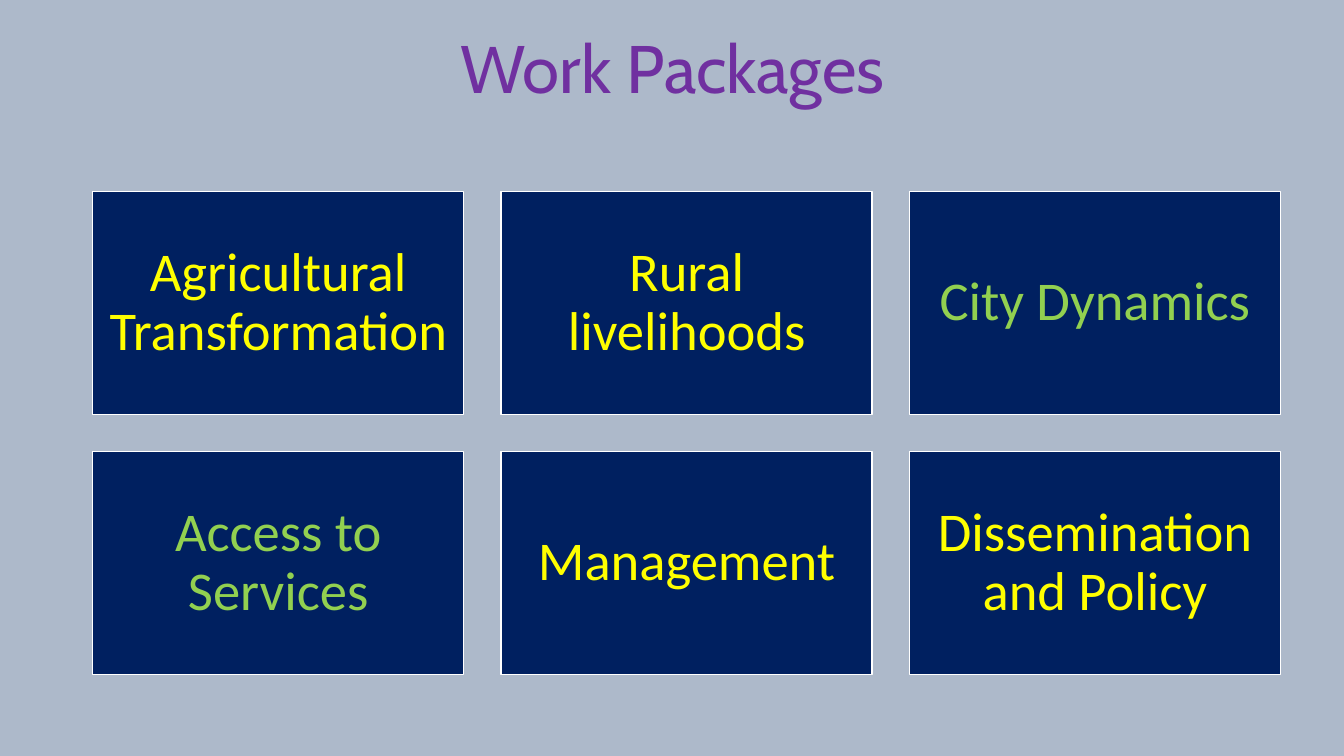
from pptx import Presentation
from pptx.dml.color import RGBColor
from pptx.enum.shapes import MSO_SHAPE
from pptx.enum.text import MSO_ANCHOR, PP_ALIGN
from pptx.util import Inches, Pt

TITLE = "Work Packages"
PACKS = [
    ("Agricultural Transformation", "yellow"),
    ("Rural livelihoods", "yellow"),
    ("City Dynamics", "green"),
    ("Access to Services", "green"),
    ("Management", "yellow"),
    ("Dissemination and Policy", "yellow"),
]
COLORS = {
    "back": "ADB9CA",
    "navy": "002060",
    "white": "FFFFFF",
    "yellow": "FFFF00",
    "green": "92D050",
    "purple": "7030A0",
}
COLS = 3
LEFT, TOP = 0.92, 1.9
WIDE, HIGH = 3.68, 2.21
GAP = 0.37
INSET = 0.16


def tint(name):
    return RGBColor.from_string(COLORS[name])


def write(shape, text, font, size, color):
    frame = shape.text_frame
    frame.word_wrap = True
    frame.vertical_anchor = MSO_ANCHOR.MIDDLE
    para = frame.paragraphs[0]
    para.text = text
    para.alignment = PP_ALIGN.CENTER
    para.line_spacing = 0.9
    para.font.name = font
    para.font.size = Pt(size)
    para.font.color.rgb = tint(color)
    return frame


def add_pack(slide, index, text, color):
    row, col = divmod(index, COLS)
    left = LEFT + col * (WIDE + GAP)
    top = TOP + row * (HIGH + GAP)
    box = slide.shapes.add_shape(
        MSO_SHAPE.RECTANGLE, Inches(left), Inches(top), Inches(WIDE), Inches(HIGH)
    )
    box.shadow.inherit = False
    box.fill.solid()
    box.fill.fore_color.rgb = tint("navy")
    box.line.color.rgb = tint("white")
    box.line.width = Pt(1)
    frame = write(box, text, "Calibri", 39, color)
    frame.margin_left = frame.margin_right = Inches(INSET)
    frame.margin_top = frame.margin_bottom = Inches(INSET)


def main():
    """Build the work packages slide."""
    deck = Presentation()
    deck.slide_width, deck.slide_height = Inches(13.33), Inches(7.5)
    slide = deck.slides.add_slide(deck.slide_layouts[6])
    slide.background.fill.solid()
    slide.background.fill.fore_color.rgb = tint("back")
    for index, (text, color) in enumerate(PACKS):
        add_pack(slide, index, text, color)
    title = slide.shapes.add_textbox(Inches(2.17), Inches(0.18), Inches(9), Inches(1.07))
    write(title, TITLE, "Cabin", 48, "purple")
    deck.save("out.pptx")


if __name__ == "__main__":
    main()
